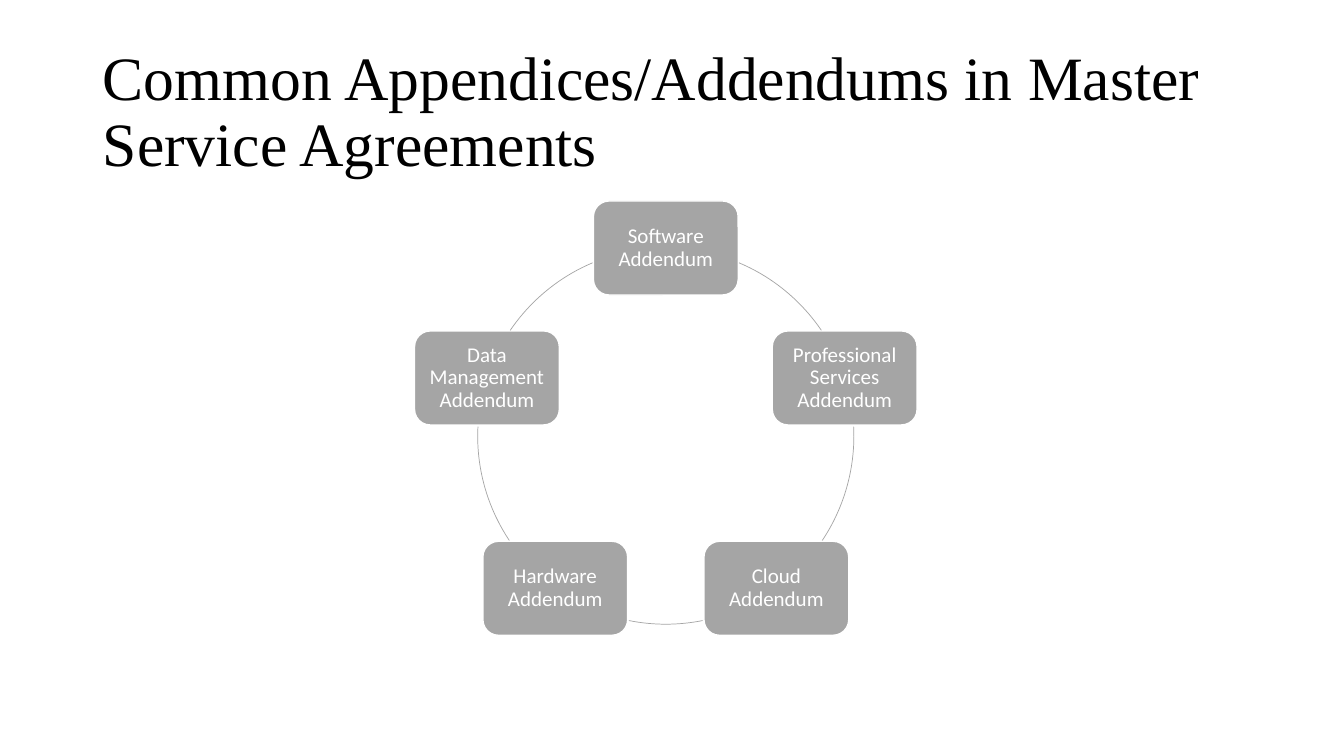
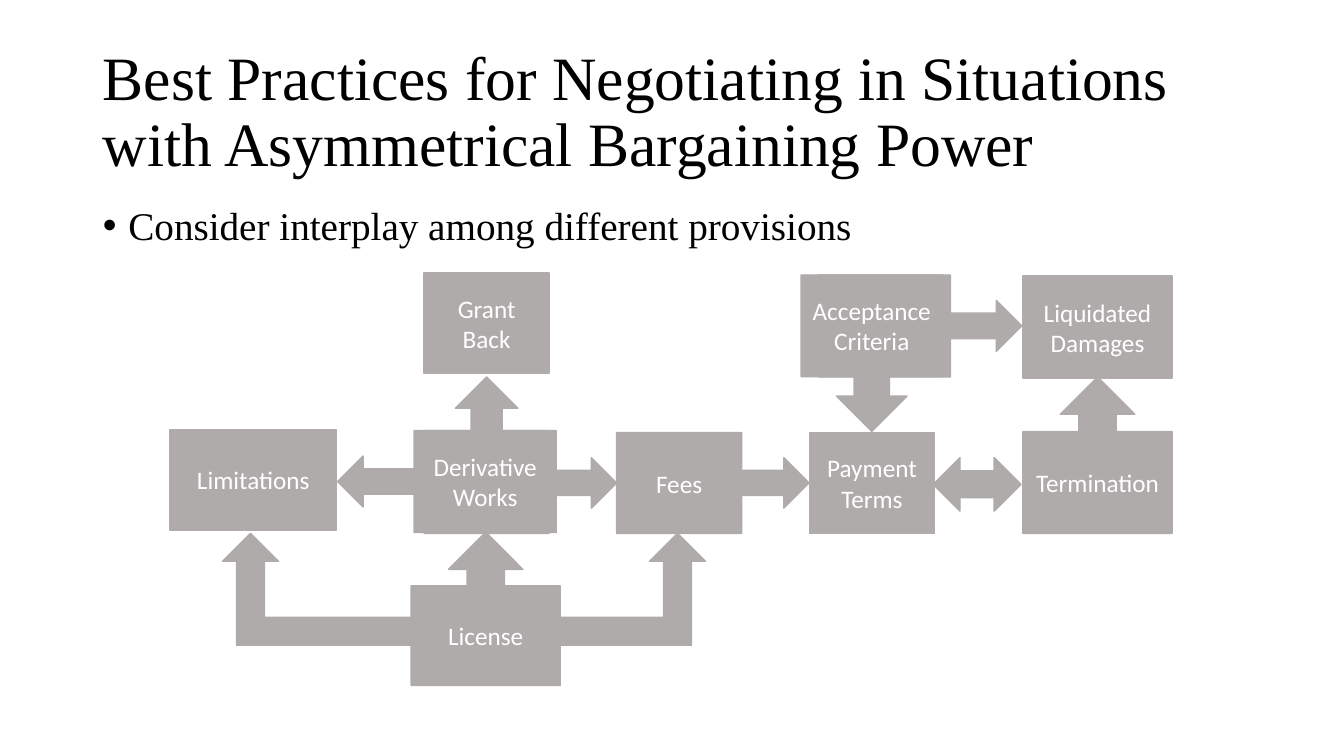
import math

from pptx import Presentation
from pptx import util as u
from pptx.dml.color import RGBColor
from pptx.enum import shapes, text

BLACK, WHITE = "000000", "FFFFFF"
CYCLE_GRAY, FLOW_GRAY = "A5A5A5", "AFABAB"
HEADING_FONT, LABEL_FONT = "Times New Roman", "Calibri"
TITLE_ONLY, TITLE_AND_CONTENT = 5, 1
Shape = shapes.MSO_SHAPE


def write(shape, words, size, font, color, align, spacing=None):
    """Put one formatted run into the first paragraph of a shape and return the paragraph."""
    frame = shape.text_frame
    frame.word_wrap = True
    frame.auto_size = text.MSO_AUTO_SIZE.NONE
    paragraph = frame.paragraphs[0]
    paragraph.alignment = align
    paragraph.line_spacing = spacing
    run = paragraph.add_run()
    run.text = words
    run.font.size = u.Pt(size)
    run.font.name = font
    run.font.color.rgb = RGBColor.from_string(color)
    return paragraph


def add_filled(slide, kind, box, fill, line, width=1):
    """Add a preset shape; box is left, top, width, height in centimetres."""
    shape = slide.shapes.add_shape(kind, *map(u.Cm, box))
    shape.shadow.inherit = False
    if fill:
        shape.fill.solid()
        shape.fill.fore_color.rgb = RGBColor.from_string(fill)
    else:
        shape.fill.background()
    shape.line.color.rgb = RGBColor.from_string(line)
    shape.line.width = u.Pt(width)
    shape.text_frame.vertical_anchor = text.MSO_ANCHOR.MIDDLE
    return shape


presentation = Presentation()
presentation.slide_width = u.Cm(33.87)
presentation.slide_height = u.Cm(19.05)

# Slides and their titles
slides = []
for layout, heading in [
    (TITLE_ONLY, "Common Appendices/Addendums in Master Service Agreements"),
    (TITLE_AND_CONTENT, "Best Practices for Negotiating in Situations with Asymmetrical Bargaining Power"),
]:
    slide = presentation.slides.add_slide(presentation.slide_layouts[layout])
    title = slide.shapes.title
    title.left, title.top, title.width, title.height = map(u.Cm, (2.34, 1.02, 29.21, 3.68))
    title.text_frame.vertical_anchor = text.MSO_ANCHOR.MIDDLE
    write(title, heading, 44, HEADING_FONT, BLACK, text.PP_ALIGN.LEFT, 0.9)
    slides.append(slide)
cycle_slide, flow_slide = slides

# Cycle of addendums, clockwise from the top
center_x, center_y, radius = 16.78, 10.99, 4.74
node_width, node_height = 3.65, 2.37
addendums = ["Software", "Professional Services", "Cloud", "Hardware", "Data Management"]
for index, name in enumerate(addendums):
    angle = math.radians(360 / len(addendums) * index - 90)
    left = center_x + radius * math.cos(angle) - node_width / 2
    top = center_y + radius * math.sin(angle) - node_height / 2
    node = add_filled(cycle_slide, Shape.ROUNDED_RECTANGLE,
                      (left, top, node_width, node_height), CYCLE_GRAY, WHITE)
    frame = node.text_frame
    frame.margin_left = frame.margin_right = frame.margin_top = frame.margin_bottom = u.Cm(0.15)
    write(node, f"{name} Addendum", 15, LABEL_FONT, WHITE, text.PP_ALIGN.CENTER, 0.9)

# Arcs between the nodes, as start and end angles in degrees
ring = (center_x - radius, center_y - radius, 2 * radius, 2 * radius)
for start, end in [(292.9, 325.8), (357.1, 33.7), (78.7, 101.3), (146.3, 182.9), (214.2, 247.1)]:
    arc = add_filled(cycle_slide, Shape.ARC, ring, None, CYCLE_GRAY, 0.5)
    # Angles are stored in 60000ths of a degree, adjustments in 100000ths
    arc.adjustments[0], arc.adjustments[1] = start * 0.6, end * 0.6

# Bullet above the flow
body = flow_slide.placeholders[1]
body.left, body.top, body.width, body.height = map(u.Cm, (2.34, 5.08, 28.47, 12.09))
bullet = write(body, "Consider interplay among different provisions", 28,
               HEADING_FONT, BLACK, text.PP_ALIGN.LEFT, 0.9)
bullet.space_before = u.Pt(10)
properties = bullet._p.get_or_add_pPr()
properties.set("marL", str(u.Cm(0.64)))
properties.set("indent", str(-u.Cm(0.64)))

# Provisions and the arrows that link them; unlabelled callouts add a second arrow to a box
for kind, box, label in [
    (Shape.RIGHT_ARROW_CALLOUT, (20.62, 6.93, 5.13, 2.57), None),
    (Shape.RIGHT_ARROW_CALLOUT, (10.69, 10.9, 4.85, 2.54), None),
    (Shape.UP_ARROW_CALLOUT, (10.69, 9.5, 3.15, 3.86), None),
    (Shape.RIGHT_ARROW_CALLOUT, (15.54, 10.9, 4.85, 2.54), "Fees"),
    (Shape.DOWN_ARROW_CALLOUT, (20.19, 6.93, 3.56, 3.94), "Acceptance Criteria"),
    (Shape.RECTANGLE, (20.4, 10.9, 3.15, 2.54), "Payment Terms"),
    (Shape.UP_ARROW_CALLOUT, (25.78, 9.5, 3.76, 3.94), "Termination"),
    (Shape.RECTANGLE, (4.29, 10.82, 4.19, 2.54), "Limitations"),
    (Shape.LEFT_ARROW_CALLOUT, (8.51, 10.85, 5.51, 2.57), "Derivative Works"),
    (Shape.RECTANGLE, (10.69, 6.88, 3.15, 2.54), "Grant Back"),
    (Shape.UP_ARROW_CALLOUT, (10.36, 13.41, 3.76, 3.86), "License"),
    (Shape.BENT_UP_ARROW, (14.12, 13.44, 3.66, 2.82), None),
    (Shape.LEFT_RIGHT_ARROW, (23.52, 11.53, 2.21, 1.35), None),
    (Shape.RECTANGLE, (25.78, 6.96, 3.76, 2.57), "Liquidated Damages"),
]:
    provision = add_filled(flow_slide, kind, box, FLOW_GRAY, FLOW_GRAY)
    if label:
        write(provision, label, 18, LABEL_FONT, WHITE, text.PP_ALIGN.CENTER)

limitations_arrow = add_filled(flow_slide, Shape.BENT_UP_ARROW, (5.61, 13.44, 4.78, 2.82),
                               FLOW_GRAY, FLOW_GRAY)
limitations_arrow._element.spPr.xfrm.set("flipH", "1")

presentation.save("out.pptx")
